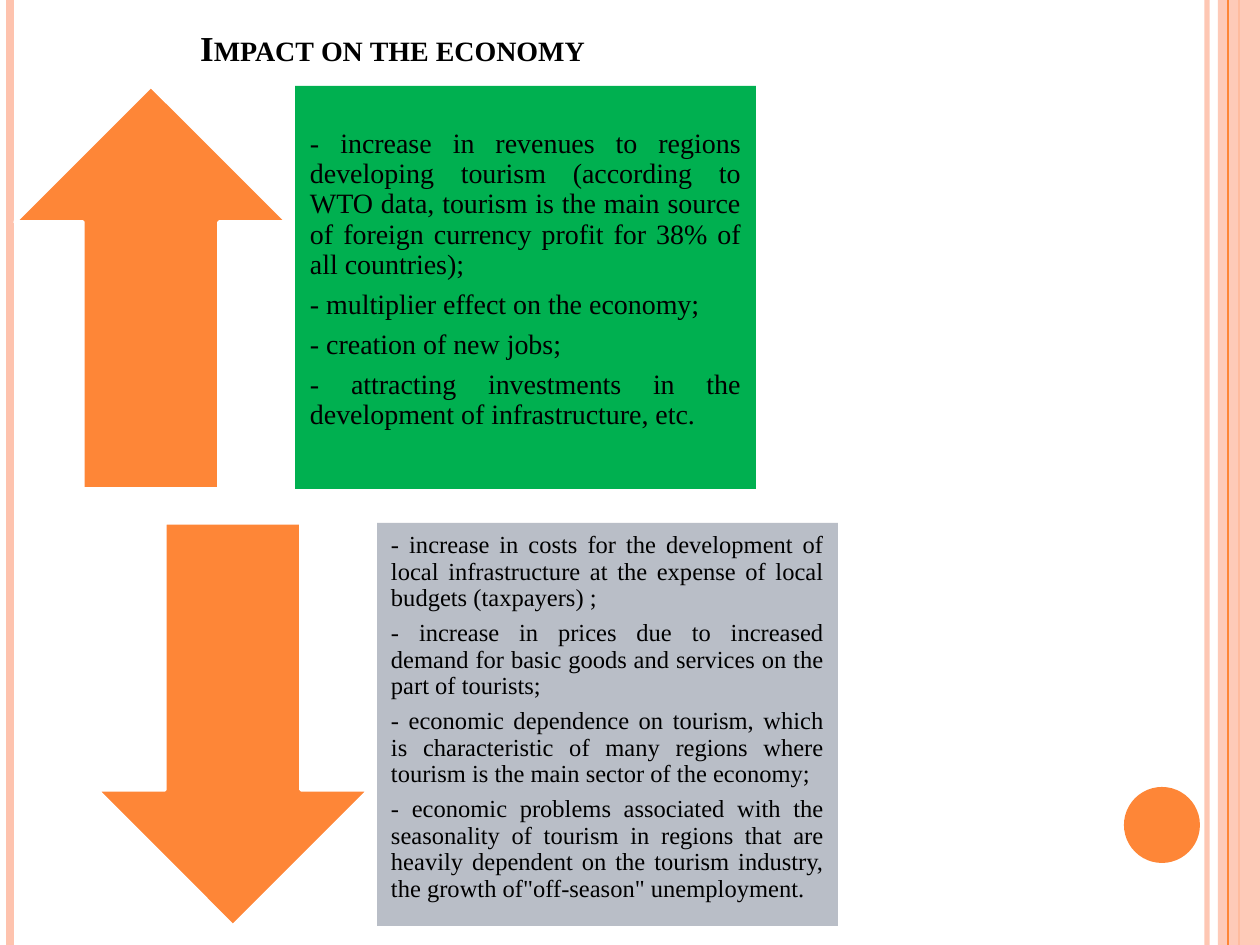
from lxml import etree
from pptx import Presentation
from pptx.dml.color import RGBColor
from pptx.enum.shapes import MSO_CONNECTOR, MSO_SHAPE
from pptx.enum.text import MSO_ANCHOR, PP_ALIGN
from pptx.oxml.ns import qn
from pptx.util import Emu, Pt

RECT, OVAL = MSO_SHAPE.RECTANGLE, MSO_SHAPE.OVAL
UP, DOWN = MSO_SHAPE.UP_ARROW, MSO_SHAPE.DOWN_ARROW
STRAIGHT = MSO_CONNECTOR.STRAIGHT
MIDDLE, BOTTOM = MSO_ANCHOR.MIDDLE, MSO_ANCHOR.BOTTOM
CENTER, JUSTIFY = PP_ALIGN.CENTER, PP_ALIGN.JUSTIFY

# Content
FONT = "Times New Roman"
COLORS = {"orange": "FE8637", "peach": "FEC3AE", "green": "00B050",
          "gray": "B9BEC7", "white": "FFFFFF", "black": "000000"}
TITLE = "Impact on the economy"
IMPACTS = [
    {"arrow": UP, "left": 15, "top": 86, "fill": "green", "size": 16, "inset": 15, "points": [
        "- increase in revenues to regions developing tourism (according to WTO data, "
        "tourism is the main source of foreign currency profit for 38% of all countries);",
        "- multiplier effect on the economy;",
        "- creation of new jobs;",
        "- attracting investments in the development of infrastructure, etc."]},
    {"arrow": DOWN, "left": 97, "top": 523, "fill": "gray", "size": 14, "inset": 14, "points": [
        "- increase in costs for the development of local infrastructure at the expense "
        "of local budgets (taxpayers) ;",
        "- increase in prices due to increased demand for basic goods and services on the "
        "part of tourists;",
        "- economic dependence on tourism, which is characteristic of many regions where "
        "tourism is the main sector of the economy;",
        "- economic problems associated with the seasonality of tourism in regions that are "
        "heavily dependent on the tourism industry, the growth of\"off-season\" unemployment."]},
]

# Layout in px
WIDTH, HEIGHT = 1260, 945
ARROW_WIDTH, PANEL_OFFSET, PANEL_WIDTH, ROW_HEIGHT = 272, 280, 461, 403
# x, colour, points wide, opacity in percent
BACK_STRIPES = [(1207, "peach", 3, 93), (10, "peach", 4.5, 100), (1239, "orange", 1.5, 100)]
FRONT_STRIPES = [(1228, "orange", 0.75, 100)]


def px(value):
    return Emu(round(value * 914400 / 126))


def rgb(name):
    return RGBColor.from_string(COLORS[name])


def set_opacity(part, percent):
    if percent < 100:
        color = next(part._element.spPr.iter(qn("a:srgbClr")))
        etree.SubElement(color, qn("a:alpha")).set("val", str(percent * 1000))


def add_stripes(slide, stripes):
    for x, color, width, opacity in stripes:
        stripe = slide.shapes.add_connector(STRAIGHT, px(x), 0, px(x), px(HEIGHT))
        stripe.line.color.rgb = rgb(color)
        stripe.line.width = Pt(width)
        set_opacity(stripe, opacity)
        etree.SubElement(stripe._element.spPr, qn("a:effectLst"))


def add_block(slide, kind, bounds, fill, outline=None):
    block = slide.shapes.add_shape(kind, *map(px, bounds))
    block.shadow.inherit = False
    block.fill.solid()
    block.fill.fore_color.rgb = rgb(fill)
    if outline:
        block.line.color.rgb = rgb(outline)
        block.line.width = Pt(2)
    else:
        block.line.fill.background()
    return block


def add_span(para, text, size):
    span = para.add_run()
    span.text = text
    span.font.name = FONT
    span.font.size = Pt(size)
    span.font.color.rgb = rgb("black")
    return span


def add_title(slide):
    box = slide.shapes.add_textbox(px(54), px(6), px(677), px(69))
    box.text_frame.word_wrap = True
    box.text_frame.vertical_anchor = BOTTOM
    para = box.text_frame.paragraphs[0]
    para.alignment = CENTER
    span = add_span(para, TITLE, 20)
    span.font.bold = True
    span.font._element.set("cap", "small")


def add_impact(slide, impact):
    left, top = impact["left"], impact["top"]
    add_block(slide, impact["arrow"], (left, top, ARROW_WIDTH, ROW_HEIGHT), "orange", "white")
    panel = add_block(slide, RECT, (left + PANEL_OFFSET, top, PANEL_WIDTH, ROW_HEIGHT),
                      impact["fill"])
    frame = panel.text_frame
    frame.word_wrap = True
    frame.vertical_anchor = MIDDLE
    frame.margin_top = 0
    frame.margin_left = frame.margin_right = frame.margin_bottom = px(impact["inset"])
    for index, point in enumerate(impact["points"]):
        para = frame.add_paragraph() if index else frame.paragraphs[0]
        para.alignment = JUSTIFY
        para.line_spacing = 0.9
        para.space_after = Pt(round(impact["size"] * 0.35, 1))
        add_span(para, point, impact["size"])


def main():
    deck = Presentation()
    deck.slide_width, deck.slide_height = px(WIDTH), px(HEIGHT)
    slide = deck.slides.add_slide(deck.slide_layouts[6])

    # Side decoration
    add_stripes(slide, BACK_STRIPES)
    band = add_block(slide, RECT, (1218, 0, 42, HEIGHT), "peach")
    set_opacity(band, 87)
    add_stripes(slide, FRONT_STRIPES)
    add_block(slide, OVAL, (1124, 787, 76, 76), "orange")

    # Title and the two impacts
    add_title(slide)
    for impact in IMPACTS:
        add_impact(slide, impact)
    deck.save("out.pptx")


if __name__ == "__main__":
    main()
